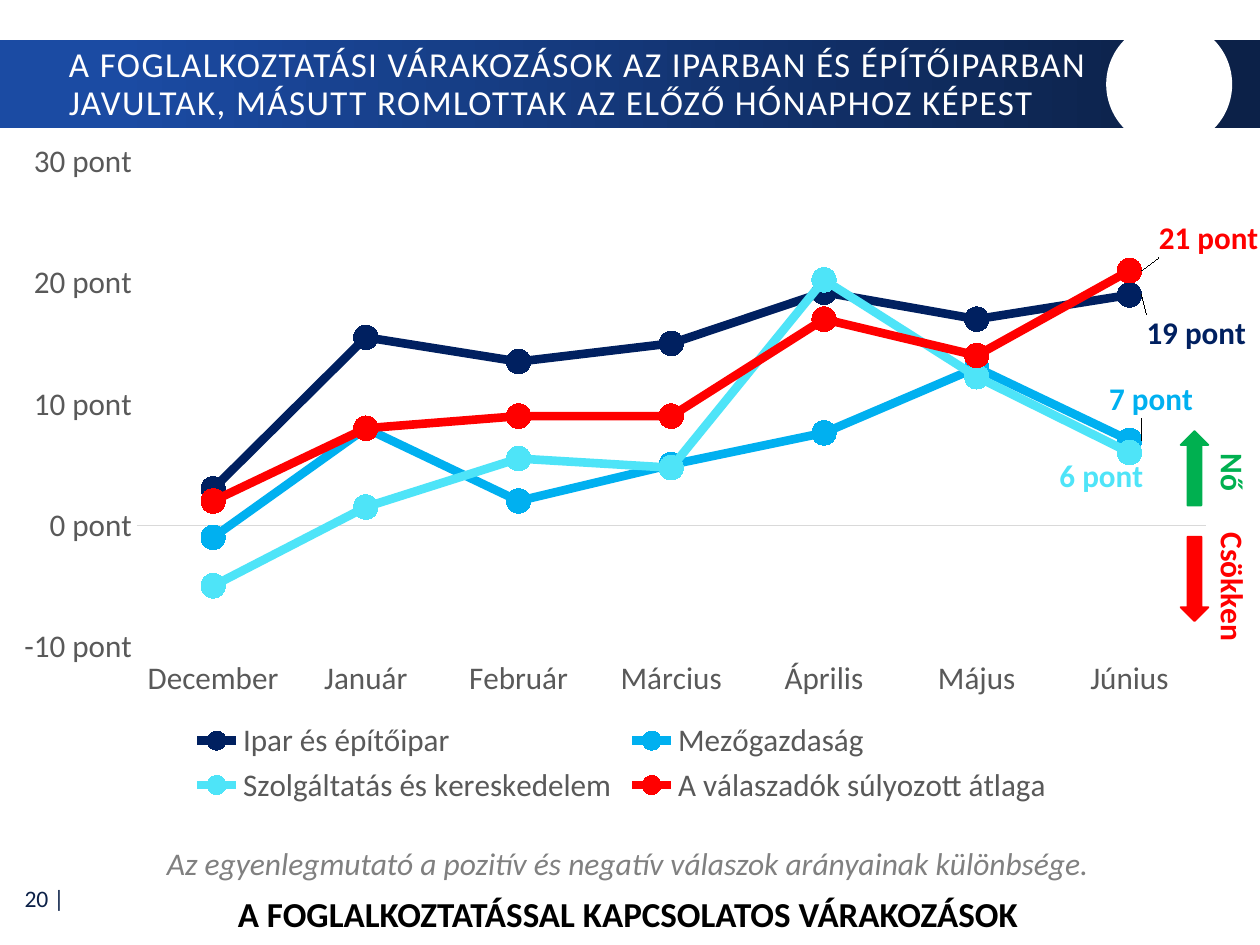
import pptx
import pptx.chart.data
import pptx.dml.color
import pptx.enum.chart
import pptx.enum.shapes
import pptx.enum.text
import pptx.oxml
import pptx.oxml.ns
import pptx.util

Cm = pptx.util.Cm
Pt = pptx.util.Pt
RGBColor = pptx.dml.color.RGBColor
Align = pptx.enum.text.PP_ALIGN
Anchor = pptx.enum.text.MSO_ANCHOR
Shape = pptx.enum.shapes.MSO_SHAPE

WHITE = RGBColor(0xFF, 0xFF, 0xFF)
BLACK = RGBColor(0, 0, 0)
ROYAL = RGBColor(0x1B, 0x4B, 0xA3)
MIDNIGHT = RGBColor(0x0C, 0x21, 0x48)
NAVY = RGBColor(0x00, 0x20, 0x60)
BLUE = RGBColor(0x00, 0xB0, 0xF0)
CYAN = RGBColor(0x4E, 0xE4, 0xF8)
RED = RGBColor(0xFF, 0, 0)
GREEN = RGBColor(0x00, 0xB0, 0x50)
GRAY = RGBColor(0x80, 0x80, 0x80)
AXIS_TEXT = RGBColor(0x59, 0x59, 0x59)
AXIS_LINE = RGBColor(0xD9, 0xD9, 0xD9)

FONT = "Calibri"
NUMBER_FORMAT = '0\\ "pont"'
MONTHS = ["December", "Január", "Február", "Március", "Április", "Május", "Június"]
SERIES = [
    ("Ipar és építőipar", [3, 15.5, 13.5, 15, 19.22, 17, 19], NAVY, (0, 0.056)),
    ("Mezőgazdaság", [-1, 8, 2, 5, 7.62, 13, 7], BLUE, (-0.03, -0.06)),
    ("Szolgáltatás és kereskedelem", [-5, 1.5, 5.5, 4.75, 20.24, 12.25, 6], CYAN, (-0.07, 0.035)),
    ("A válaszadók súlyozott átlaga", [2, 8, 9, 9, 17, 14, 21], RED, (0.01, -0.047)),
]


def set_font(font, size, color, bold=False, italic=False):
    font.name = FONT
    font.size = Pt(size)
    font.color.rgb = color
    font.bold = bold
    font.italic = italic


def write_text(paragraph, text, size=18, color=BLACK, bold=False, italic=False,
               align=Align.LEFT, line_spacing=None, space_after=None, tracking=None):
    run = paragraph.add_run()
    run.text = text
    set_font(run.font, size, color, bold, italic)
    paragraph.alignment = align
    if line_spacing:
        paragraph.line_spacing = line_spacing
    if space_after:
        paragraph.space_after = Pt(space_after)
    if tracking:
        run.font._element.set("spc", str(int(tracking * 100)))


def manual_layout(target=None, **values):
    namespace = pptx.oxml.ns.nsdecls("c")
    parts = f'<c:layoutTarget val="{target}"/>' if target else ""
    if target:
        parts += '<c:xMode val="edge"/><c:yMode val="edge"/>'
    parts += "".join(f'<c:{name} val="{value}"/>' for name, value in values.items())
    return pptx.oxml.parse_xml(
        f"<c:layout {namespace}><c:manualLayout>{parts}</c:manualLayout></c:layout>")


class SlideBuilder:
    def __init__(self, slide):
        self.slide = slide

    def shape(self, kind, left, top, width, height, color=None, outlined=False, rotation=0):
        shape = self.slide.shapes.add_shape(kind, Cm(left), Cm(top), Cm(width), Cm(height))
        shape.shadow.inherit = False
        shape.rotation = rotation
        if color is not None:
            shape.fill.solid()
            shape.fill.fore_color.rgb = color
        if outlined:
            shape.line.color.rgb = color
            shape.line.width = Pt(1)
        else:
            shape.line.fill.background()
        return shape

    def gradient_band(self, left, top, width, height, stops):
        band = self.shape(Shape.RECTANGLE, left, top, width, height)
        band.fill.gradient()
        band.fill.gradient_angle = 0
        for stop, (position, color) in zip(band.fill.gradient_stops, stops):
            stop.position = position
            stop.color.rgb = color

    def text(self, left, top, width, height, paragraphs, anchor=Anchor.TOP, vertical=False):
        box = self.slide.shapes.add_textbox(Cm(left), Cm(top), Cm(width), Cm(height))
        frame = box.text_frame
        frame.word_wrap = True
        frame.vertical_anchor = anchor
        if vertical:
            frame._txBody.bodyPr.set("vert", "vert")
        for index, (text, style) in enumerate(paragraphs):
            paragraph = frame.add_paragraph() if index else frame.paragraphs[0]
            write_text(paragraph, text, **style)

    def line_chart(self, left, top, width, height):
        data = pptx.chart.data.CategoryChartData(number_format=NUMBER_FORMAT)
        data.categories = MONTHS
        for name, values, color, offset in SERIES:
            data.add_series(name, values)
        chart = self.slide.shapes.add_chart(
            pptx.enum.chart.XL_CHART_TYPE.LINE_MARKERS,
            Cm(left), Cm(top), Cm(width), Cm(height), data).chart
        set_font(chart.font, 18, BLACK)
        chart.has_title = False
        chart.has_legend = True
        chart.legend.position = pptx.enum.chart.XL_LEGEND_POSITION.BOTTOM
        chart.legend.include_in_layout = False
        set_font(chart.legend.font, 18, AXIS_TEXT)
        self.style_axes(chart)
        plot = chart.plots[0]
        plot.vary_by_categories = False
        for series, (name, values, color, offset) in zip(plot.series, SERIES):
            self.style_series(series, color, len(values) - 1, offset)
        plot_area = chart._chartSpace.chart.plotArea
        for layout in plot_area.xpath("c:layout"):
            plot_area.remove(layout)
        plot_area.insert(0, manual_layout("inner", x=0.11, y=0.05, w=0.86, h=0.71))

    def style_axes(self, chart):
        for axis in (chart.category_axis, chart.value_axis):
            axis.has_major_gridlines = False
            axis.major_tick_mark = pptx.enum.chart.XL_TICK_MARK.NONE
            axis.minor_tick_mark = pptx.enum.chart.XL_TICK_MARK.NONE
            set_font(axis.tick_labels.font, 18, AXIS_TEXT)
        chart.category_axis.tick_label_position = pptx.enum.chart.XL_TICK_LABEL_POSITION.LOW
        chart.category_axis.format.line.color.rgb = AXIS_LINE
        chart.category_axis.format.line.width = Pt(0.75)
        values = chart.value_axis
        values.format.line.fill.background()
        values.minimum_scale, values.maximum_scale, values.major_unit = -10, 30, 10
        values.tick_labels.number_format = NUMBER_FORMAT
        values.tick_labels.number_format_is_linked = False

    def style_series(self, series, color, last, offset):
        series.smooth = False
        series.format.line.color.rgb = color
        series.format.line.width = Pt(5)
        series.marker.style = pptx.enum.chart.XL_MARKER_STYLE.CIRCLE
        series.marker.size = 14
        series.marker.format.fill.solid()
        series.marker.format.fill.fore_color.rgb = color
        series.marker.format.line.color.rgb = color
        label = series.points[last].data_label
        set_font(label.font, 18, color, bold=True)
        label.position = pptx.enum.chart.XL_LABEL_POSITION.RIGHT
        index = series._element.xpath("c:dLbls/c:dLbl/c:idx")[0]
        index.addnext(manual_layout(x=offset[0], y=offset[1]))


def main():
    presentation = pptx.Presentation()
    presentation.slide_width, presentation.slide_height = Cm(25.4), Cm(19.05)
    builder = SlideBuilder(presentation.slides.add_slide(presentation.slide_layouts[6]))

    builder.text(0.03, 17.63, 1.52, 0.94, [
        ("20 |", dict(size=13.5, color=MIDNIGHT, align=Align.RIGHT))], anchor=Anchor.MIDDLE)
    builder.gradient_band(0, 0.81, 25.4, 1.78, [(0.09, ROYAL), (0.95, MIDNIGHT)])
    builder.shape(Shape.OVAL, 22.3, 0.43, 2.54, 2.54, WHITE)
    builder.text(1.14, 0.86, 21.44, 1.7, [
        ("A FOGLALKOZTATÁSI VÁRAKOZÁSOK AZ IPARBAN ÉS ÉPÍTŐIPARBAN JAVULTAK, "
         "MÁSUTT ROMLOTTAK AZ ELŐZŐ HÓNAPHOZ KÉPEST",
         dict(size=20, color=WHITE, line_spacing=0.9, tracking=0.8))], anchor=Anchor.MIDDLE)
    builder.text(2.13, 16.89, 21.06, 2.08, [
        ("Az egyenlegmutató a pozitív és negatív válaszok arányainak különbsége.",
         dict(color=GRAY, italic=True, align=Align.CENTER, space_after=6)),
        ("A FOGLALKOZTATÁSSAL KAPCSOLATOS VÁRAKOZÁSOK",
         dict(size=20, bold=True, align=Align.CENTER))])
    builder.line_chart(0, 2.57, 25.37, 13.77)

    for word, color, arrow_top, arrow_height, rotation, text_top, text_height in (
            ("Nő", GREEN, 8.69, 1.5, 0, 8.89, 1.5),
            ("Csökken", RED, 10.82, 1.7, 180, 10.49, 2.82)):
        builder.shape(Shape.UP_ARROW, 23.8, arrow_top, 0.56, arrow_height, color, True, rotation)
        builder.text(24.1, text_top, 1.27, text_height,
                     [(word, dict(color=color, bold=True))], vertical=True)

    presentation.save("out.pptx")


if __name__ == "__main__":
    main()
